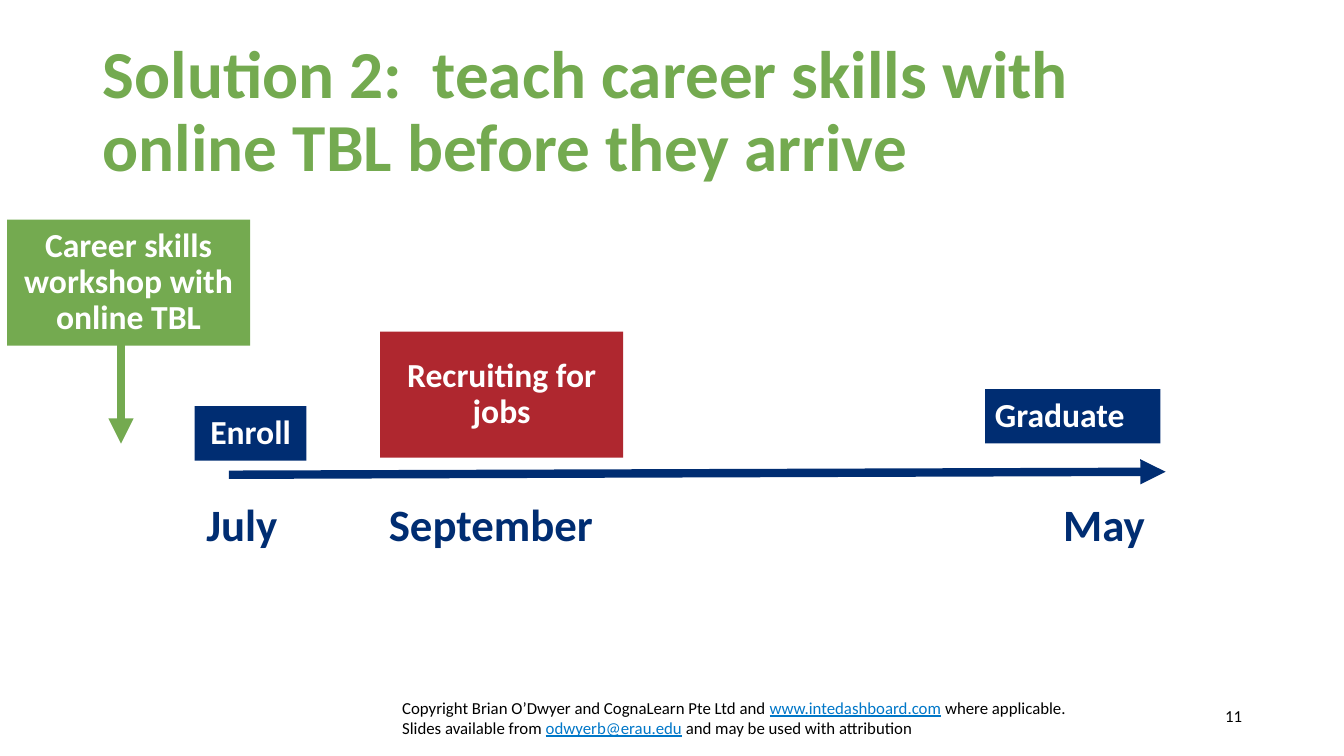
import dataclasses

import pptx
import pptx.dml.color
import pptx.enum.shapes
import pptx.enum.text
import pptx.oxml
import pptx.oxml.ns
import pptx.util
from pptx.util import Inches

ALIGN = pptx.enum.text.PP_ALIGN
ANCHOR = pptx.enum.text.MSO_ANCHOR


@dataclasses.dataclass(frozen=True)
class Theme:
    font: str = "Calibri"
    green: str = "74AA50"
    navy: str = "002D72"
    red: str = "AF272F"
    link: str = "0077C8"
    black: str = "000000"
    white: str = "FFFFFF"
    title_size: int = 48
    date_size: int = 32
    box_size: int = 24
    small_size: int = 12
    arrow_width: int = 6


THEME = Theme()


def rgb(color):
    return pptx.dml.color.RGBColor.from_string(color)


def write_text(paragraph, text, *, size, color, bold=False, underline=False,
               align=ALIGN.LEFT, line_spacing=1.0):
    paragraph.alignment = align
    paragraph.line_spacing = line_spacing
    run = paragraph.add_run()
    run.text = text
    run.font.name = THEME.font
    run.font.size = pptx.util.Pt(size)
    run.font.bold = bold
    run.font.underline = underline
    run.font.color.rgb = rgb(color)


def prepare_frame(shape, anchor):
    frame = shape.text_frame
    frame.word_wrap = True
    frame.auto_size = pptx.enum.text.MSO_AUTO_SIZE.NONE
    frame.vertical_anchor = anchor
    return frame


def set_title(slide, text):
    title = slide.shapes.title
    title.left, title.top = Inches(0.92), Inches(0.4)
    title.width, title.height = Inches(11.5), Inches(1.45)
    frame = prepare_frame(title, ANCHOR.MIDDLE)
    write_text(frame.paragraphs[0], text, size=THEME.title_size,
               color=THEME.green, bold=True, line_spacing=0.9)


def add_text_box(slide, left, top, width, height, anchor=ANCHOR.TOP):
    box = slide.shapes.add_textbox(Inches(left), Inches(top), Inches(width), Inches(height))
    return prepare_frame(box, anchor)


def add_event(slide, text, left, top, width, height, color, align=ALIGN.CENTER):
    event = slide.shapes.add_shape(
        pptx.enum.shapes.MSO_SHAPE.RECTANGLE,
        Inches(left), Inches(top), Inches(width), Inches(height))
    event.shadow.inherit = False
    event.fill.solid()
    event.fill.fore_color.rgb = rgb(color)
    event.line.fill.background()
    frame = prepare_frame(event, ANCHOR.MIDDLE)
    write_text(frame.paragraphs[0], text, size=THEME.box_size, color=THEME.white,
               bold=True, align=align, line_spacing=0.9)


def add_date(slide, text, left, width):
    frame = add_text_box(slide, left, 5.03, width, 0.4, ANCHOR.MIDDLE)
    write_text(frame.paragraphs[0], text, size=THEME.date_size, color=THEME.navy,
               bold=True, align=ALIGN.CENTER, line_spacing=0.9)


def add_arrow(slide, start, end, color):
    arrow = slide.shapes.add_connector(
        pptx.enum.shapes.MSO_CONNECTOR.STRAIGHT,
        *(Inches(value) for value in start + end))
    arrow.line.color.rgb = rgb(color)
    arrow.line.width = pptx.util.Pt(THEME.arrow_width)
    namespace = pptx.oxml.ns.nsdecls("a")
    arrow.line._get_or_add_ln().append(
        pptx.oxml.parse_xml(f'<a:tailEnd {namespace} type="triangle"/>'))
    arrow._element.spPr.append(pptx.oxml.parse_xml(f"<a:effectLst {namespace}/>"))


def add_footer(slide):
    lines = [
        ("Copyright Brian O’Dwyer and CognaLearn Pte Ltd and ",
         "www.intedashboard.com", " where applicable."),
        ("Slides available from ", "odwyerb@erau.edu",
         " and may be used with attribution"),
    ]
    frame = add_text_box(slide, 3.89, 6.87, 7.92, 0.4)
    for index, (before, address, after) in enumerate(lines):
        paragraph = frame.add_paragraph() if index else frame.paragraphs[0]
        write_text(paragraph, before, size=THEME.small_size, color=THEME.black)
        write_text(paragraph, address, size=THEME.small_size, color=THEME.link, underline=True)
        write_text(paragraph, after, size=THEME.small_size, color=THEME.black)


def add_slide_number(slide, number):
    frame = add_text_box(slide, 11.96, 6.95, 0.46, 0.4)
    write_text(frame.paragraphs[0], number, size=THEME.small_size,
               color=THEME.black, align=ALIGN.RIGHT)


def main():
    presentation = pptx.Presentation()
    presentation.slide_width = Inches(13.33)
    presentation.slide_height = Inches(7.5)
    slide = presentation.slides.add_slide(presentation.slide_layouts[5])

    set_title(slide, "Solution 2:  teach career skills with online TBL before they arrive")
    add_slide_number(slide, "11")
    add_footer(slide)

    add_event(slide, "Recruiting for jobs", 3.77, 3.29, 2.41, 1.25, THEME.red)
    add_arrow(slide, (2.27, 4.71), (11.56, 4.68), THEME.navy)
    for text, left, width in [("July", 1.92, 0.96), ("September", 3.67, 2.4),
                              ("May", 10.28, 1.34)]:
        add_date(slide, text, left, width)
    add_event(slide, "Graduate", 9.77, 3.86, 1.74, 0.54, THEME.navy, ALIGN.LEFT)
    add_event(slide, "Enroll", 1.93, 4.03, 1.11, 0.54, THEME.navy)
    add_event(slide, "Career skills workshop with online TBL", 0.07, 2.18, 2.41, 1.25,
              THEME.green)
    add_arrow(slide, (1.2, 3.42), (1.2, 4.4), THEME.green)

    presentation.save("out.pptx")


if __name__ == "__main__":
    main()
